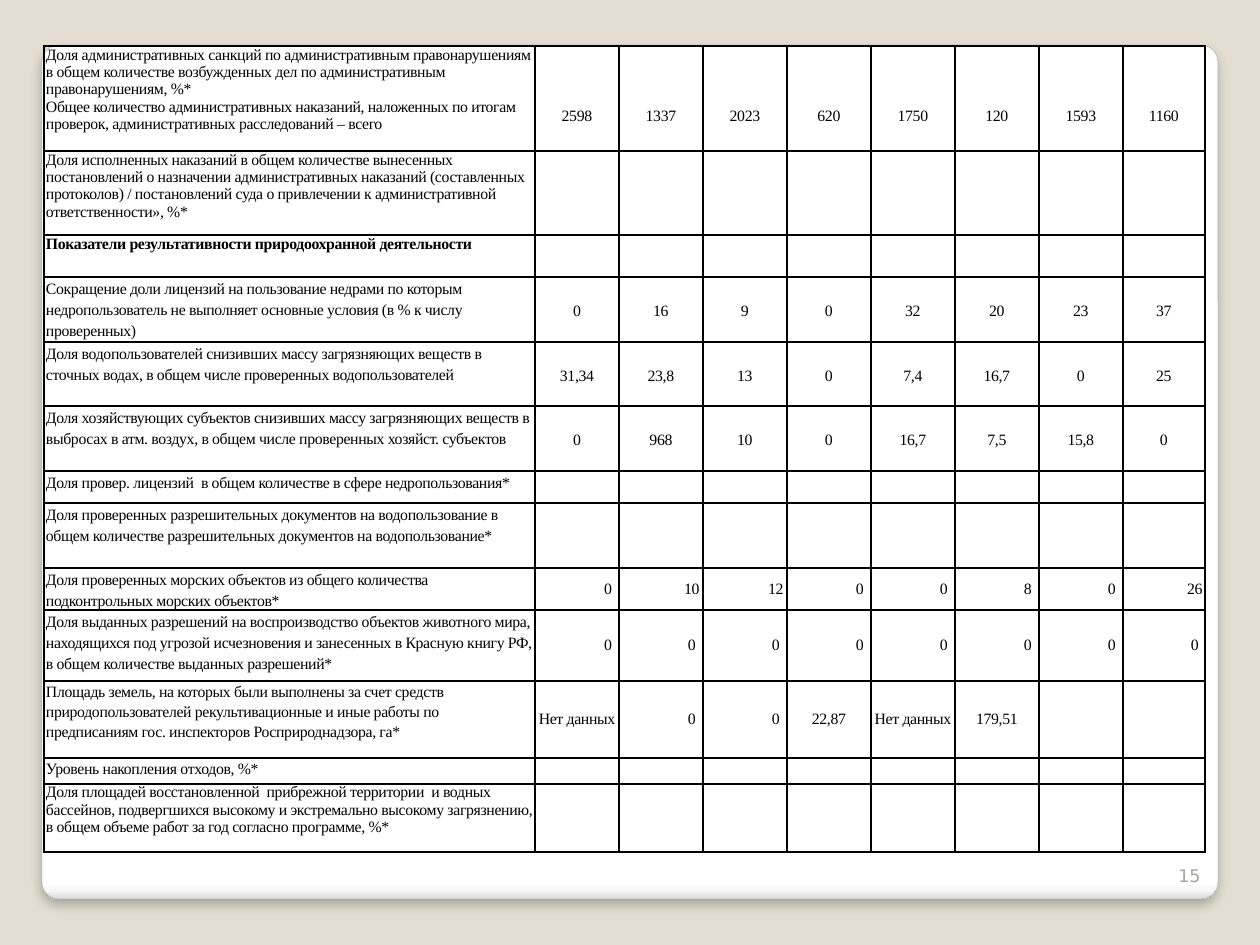
"""Build the slide with the table of nature protection indicators."""
import dataclasses

import lxml.etree
import pptx
import pptx.dml.color
import pptx.enum.shapes
import pptx.enum.text
import pptx.oxml
import pptx.oxml.ns
import pptx.util

EMU_PER_PX = 914400 // 126
ALIGN = pptx.enum.text.PP_ALIGN
ANCHOR = pptx.enum.text.MSO_ANCHOR


@dataclasses.dataclass(frozen=True)
class Theme:
    """Colours, fonts and type sizes of the slide."""
    background: str = "E3DED1"
    card_line: str = "A4A4A4"
    card_stops: tuple = ((0, "FFFFFF"), (98, "FFFFFF"), (99, "F7F7F7"), (100, "DADADA"))
    ink: str = "000000"
    muted: str = "A8A49B"
    table_font: str = "Times New Roman"
    number_font: str = "DejaVu Sans"
    table_size: int = 9
    number_size: int = 10


THEME = Theme()
EXACT = pptx.util.Pt(12)
LOOSE = 1.15
SHIFT = 62
NO_DATA = "Нет данных"
COLUMNS = [491] + [84] * 7 + [82]

ROWS = [
    (105, ["Доля административных санкций по административным правонарушениям в общем количестве "
           "возбужденных дел по административным правонарушениям, %*",
           "Общее количество административных наказаний, наложенных по итогам проверок, "
           "административных расследований – всего"],
     ["2598", "1337", "2023", "620", "1750", "120", "1593", "1160"], {"value_top": 36}),
    (84, ["Доля исполненных наказаний в общем количестве вынесенных постановлений о назначении "
          "административных наказаний (составленных протоколов) / постановлений суда о "
          "привлечении к административной ответственности», %*"], [], {}),
    (42, ["Показатели результативности природоохранной деятельности"], [], {"bold": True}),
    (65, ["Сокращение доли лицензий на пользование недрами по которым недропользователь не "
          "выполняет основные условия (в % к числу проверенных)"],
     ["0", "16", "9", "0", "32", "20", "23", "37"], {"spacing": EXACT, "value_spacing": EXACT}),
    (64, ["Доля водопользователей снизивших массу загрязняющих веществ в сточных водах, в общем "
          "числе проверенных водопользователей"],
     ["31,34", "23,8", "13", "0", "7,4", "16,7", "0", "25"],
     {"spacing": EXACT, "value_spacing": EXACT}),
    (65, ["Доля хозяйствующих субъектов снизивших массу загрязняющих веществ в выбросах в атм. "
          "воздух, в общем числе проверенных хозяйст. субъектов"],
     ["0", "968", "10", "0", "16,7", "7,5", "15,8", "0"],
     {"spacing": EXACT, "value_spacing": EXACT}),
    (32, ["Доля провер. лицензий  в общем количестве в сфере недропользования*"], [],
     {"spacing": EXACT}),
    (65, ["Доля проверенных разрешительных документов на водопользование в общем количестве "
          "разрешительных документов на водопользование*"], [], {"spacing": EXACT}),
    (42, ["Доля проверенных морских объектов из общего количества подконтрольных морских "
          "объектов*"],
     ["0", "10", "12", "0", "0", "8", "0", "26"], {"spacing": EXACT, "shifted": range(8)}),
    (71, ["Доля выданных разрешений на воспроизводство объектов животного мира, находящихся под "
          "угрозой исчезновения и занесенных в Красную книгу РФ, в общем количестве выданных "
          "разрешений*"], ["0"] * 8, {"spacing": EXACT, "shifted": range(8)}),
    (77, ["Площадь земель, на которых были выполнены за счет средств природопользователей "
          "рекультивационные и иные работы по предписаниям гос. инспекторов Росприроднадзора, "
          "га*"], [NO_DATA, "0", "0", "22,87", NO_DATA, "179,51"],
     {"spacing": LOOSE, "shifted": (1, 2)}),
    (26, ["Уровень накопления отходов, %*"], [], {"spacing": LOOSE}),
    (68, ["Доля площадей восстановленной  прибрежной территории  и водных бассейнов, "
          "подвергшихся высокому и экстремально высокому загрязнению, в общем объеме работ за "
          "год согласно программе, %*"], [], {}),
]


def px(length):
    """Turn pixels into EMU."""
    return pptx.util.Emu(length * EMU_PER_PX)


def rgb(code):
    """Turn a hex code into a colour."""
    return pptx.dml.color.RGBColor.from_string(code)


def add_xml(parent, body, **values):
    """Append an element of the drawing namespace."""
    parent.append(pptx.oxml.parse_xml(body.format(ns=pptx.oxml.ns.nsdecls("a"), **values)))


def write(frame, lines, align=ALIGN.LEFT, font=THEME.table_font, size=THEME.table_size,
          colour=THEME.ink, bold=False, spacing=None, indent=0, tracking=-20):
    """Write one paragraph for each line with one format."""
    for index, line in enumerate(lines):
        para = frame.add_paragraph() if index else frame.paragraphs[0]
        para.alignment = align
        para.line_spacing = spacing
        if indent:
            properties = para._p.get_or_add_pPr()
            properties.set("marL", "0")
            properties.set("indent", str(px(indent)))
        span = para.add_run()
        span.text = line
        span.font.name, span.font.size, span.font.bold = font, pptx.util.Pt(size), bold
        span.font.color.rgb = rgb(colour)
        span.font._element.set("spc", str(tracking))


def add_card(page):
    """Add the rounded white card with its gradient and shadow."""
    card = page.shapes.add_shape(pptx.enum.shapes.MSO_SHAPE.ROUNDED_RECTANGLE,
                                 px(42), px(45), px(1176), px(854))
    card.adjustments[0] = 0.02
    properties = card._element.spPr
    stops = "".join(f'<a:gs pos="{place * 1000}"><a:srgbClr val="{code}"/></a:gs>'
                    for place, code in THEME.card_stops)
    add_xml(properties, '<a:gradFill {ns}><a:gsLst>{stops}</a:gsLst>'
                        '<a:lin ang="5400000" scaled="0"/></a:gradFill>', stops=stops)
    card.line.color.rgb = rgb(THEME.card_line)
    card.line.width = pptx.util.Pt(0.16)
    add_xml(properties, '<a:effectLst {ns}><a:outerShdw blurRad="76200" dist="50800" '
                        'dir="5400000" algn="tl" rotWithShape="0"><a:srgbClr val="{ink}">'
                        '<a:alpha val="25000"/></a:srgbClr></a:outerShdw></a:effectLst>',
            ink=THEME.ink)


def add_page_number(page, number):
    """Add the page number in the lower right corner."""
    frame = page.shapes.add_textbox(px(1150), px(842), px(63), px(50)).text_frame
    frame.word_wrap = True
    frame.vertical_anchor = ANCHOR.BOTTOM
    write(frame, [number], align=ALIGN.RIGHT, font=THEME.number_font,
          size=THEME.number_size, colour=THEME.muted, tracking=0)


def format_cell(cell, anchor, top=0):
    """Set the margins, borders and empty fill of a cell."""
    cell.margin_left = cell.margin_right = px(2)
    cell.margin_top, cell.margin_bottom = px(top), 0
    cell.vertical_anchor = anchor
    for side in "LRTB":
        add_xml(cell._tc.get_or_add_tcPr(),
                '<a:ln{side} {ns} w="12700"><a:solidFill><a:srgbClr val="{ink}"/>'
                '</a:solidFill></a:ln{side}>', side=side, ink=THEME.ink)
    cell.fill.background()


def fill_row(cells, label, values, bold=False, spacing=None, value_spacing=None,
             value_top=0, shifted=()):
    """Fill a table row with its label and its values."""
    format_cell(cells[0], ANCHOR.TOP)
    write(cells[0].text_frame, label, bold=bold, spacing=spacing)
    for index, cell in enumerate(cells[1:]):
        format_cell(cell, ANCHOR.MIDDLE, value_top)
        if index < len(values):
            write(cell.text_frame, [values[index]], align=ALIGN.CENTER,
                  spacing=value_spacing, indent=SHIFT if index in shifted else 0)
        else:
            lxml.etree.SubElement(cell.text_frame.paragraphs[0]._p,
                                  pptx.oxml.ns.qn("a:endParaRPr"),
                                  sz=str(THEME.table_size * 100))


def add_indicator_table(page):
    """Add the table of indicators."""
    height = sum(row[0] for row in ROWS)
    table = page.shapes.add_table(len(ROWS), len(COLUMNS), px(44), px(46),
                                  px(sum(COLUMNS)), px(height)).table
    table.first_row = table.horz_banding = False
    for column, width in zip(table.columns, COLUMNS):
        column.width = px(width)
    for row, (row_height, label, values, style) in zip(table.rows, ROWS):
        row.height = px(row_height)
        fill_row(list(row.cells), label, values, **style)


def main():
    """Build the deck and save it."""
    deck = pptx.Presentation()
    deck.slide_width, deck.slide_height = px(1260), px(945)
    page = deck.slides.add_slide(deck.slide_layouts[6])
    page.background.fill.solid()
    page.background.fill.fore_color.rgb = rgb(THEME.background)
    add_card(page)
    add_page_number(page, "15")
    add_indicator_table(page)
    deck.save("out.pptx")


if __name__ == "__main__":
    main()
